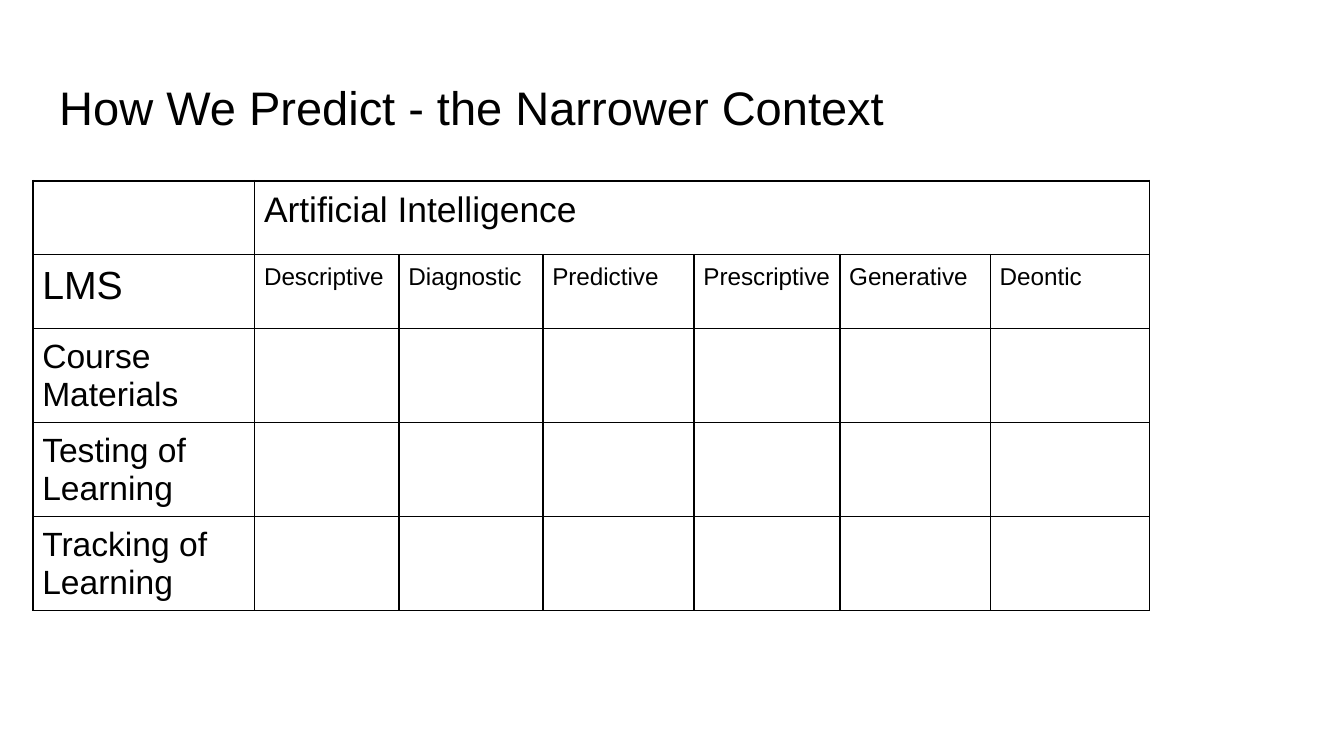
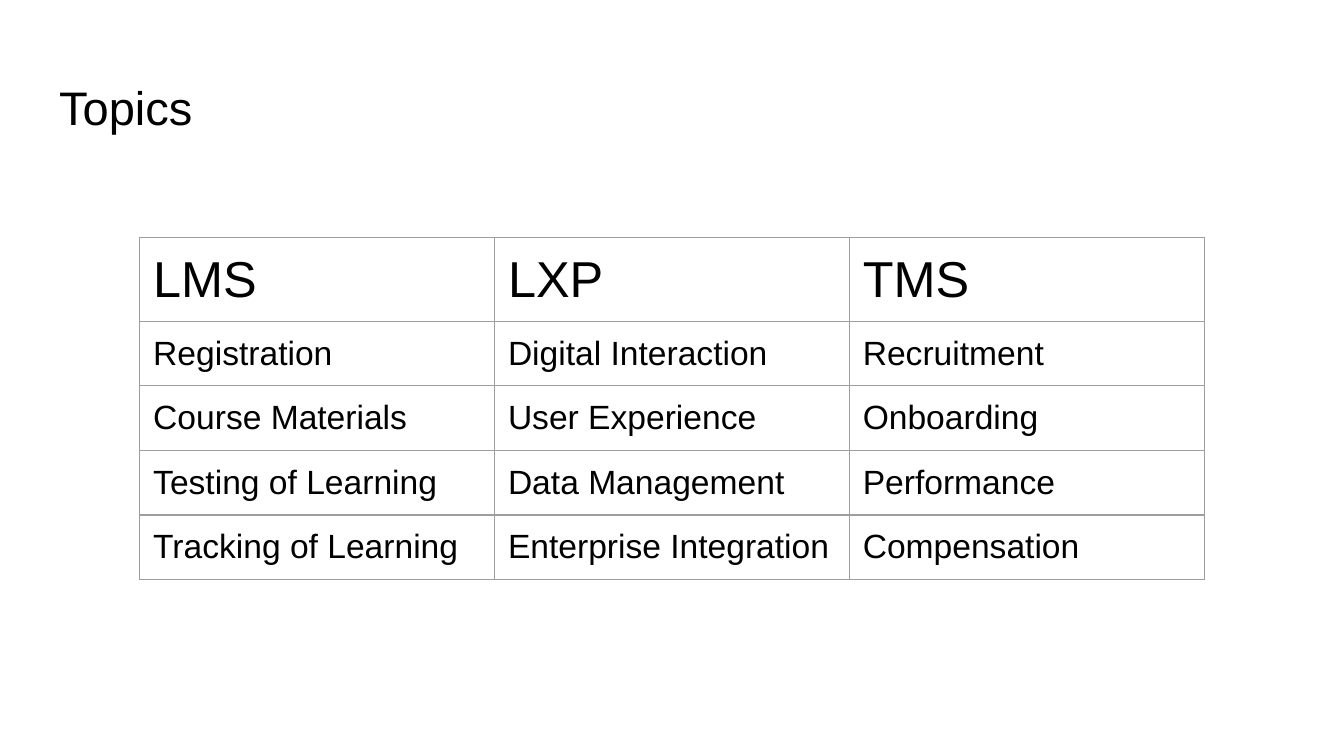
import pptx
import pptx.dml.color
import pptx.enum.text
import pptx.oxml.ns
import pptx.util
import lxml.etree

PX = 4572
FONT = "Arial"
BLACK = "000000"
GREY = "9E9E9E"
TITLE_BOX = (68, 97, 1864, 125)
TITLE_SIZE = 25.2


def px(length):
    return pptx.util.Emu(length * PX)


def color(value):
    return pptx.dml.color.RGBColor.from_string(value)


def style_text(frame, size, inset):
    frame.margin_left = frame.margin_right = px(inset)
    frame.margin_top = frame.margin_bottom = px(inset)
    for para in frame.paragraphs:
        para.alignment = pptx.enum.text.PP_ALIGN.LEFT
        for span in para.runs:
            span.font.size = pptx.util.Pt(size)
            span.font.name = FONT
            span.font.color.rgb = color(BLACK)


def border_cell(cell, line_color, width):
    properties = cell._tc.get_or_add_tcPr()
    qualify = pptx.oxml.ns.qn
    for side in ("a:lnL", "a:lnR", "a:lnT", "a:lnB"):
        line = lxml.etree.SubElement(
            properties, qualify(side), w=str(pptx.util.Pt(width)))
        fill = lxml.etree.SubElement(line, qualify("a:solidFill"))
        lxml.etree.SubElement(fill, qualify("a:srgbClr"), val=line_color)


def add_page(deck, title):
    page = deck.slides.add_slide(deck.slide_layouts[5])
    box = page.shapes.title
    box.left, box.top, box.width, box.height = map(px, TITLE_BOX)
    frame = box.text_frame
    frame.text = title
    frame.word_wrap = True
    frame.auto_size = pptx.enum.text.MSO_AUTO_SIZE.NONE
    frame.vertical_anchor = pptx.enum.text.MSO_ANCHOR.MIDDLE
    style_text(frame, TITLE_SIZE, 20)
    return page


def add_grid(page, left, top, columns, heights, rows, size_at, inset, line_color, line_width):
    frame = page.shapes.add_table(
        len(rows), len(columns), px(left), px(top), px(sum(columns)), px(sum(heights)))
    table = frame.table
    table.first_row = False
    table.horz_banding = False
    for column, width in zip(table.columns, columns):
        column.width = px(width)
    for row, height in zip(table.rows, heights):
        row.height = px(height)
    for row_index, texts in enumerate(rows):
        for column_index in range(len(columns)):
            cell = table.cell(row_index, column_index)
            border_cell(cell, line_color, line_width)
            cell.fill.background()
            if column_index < len(texts) and texts[column_index]:
                cell.text = texts[column_index]
                style_text(cell.text_frame, size_at(row_index, column_index), inset)
                cell.margin_left = cell.margin_right = px(inset)
                cell.margin_top = cell.margin_bottom = px(inset)
    return table


def context_size(row, column):
    if row == 0:
        return 19
    if row == 1:
        return 13 if column else 21
    return 18


def topic_size(row, column):
    return 18 if row else 27


def build_context_page(deck):
    page = add_page(deck, "How We Predict - the Narrower Context")
    rows = [
        ["", "Artificial Intelligence"],
        ["LMS", "Descriptive", "Diagnostic", "Predictive",
         "Prescriptive", "Generative", "Deontic"],
        ["Course Materials"],
        ["Testing of Learning"],
        ["Tracking of Learning"],
    ]
    columns = [330, 215, 214, 225, 217, 224, 237]
    table = add_grid(page, 49, 269, columns, [110] * len(rows), rows,
                     context_size, 14, BLACK, 1)
    table.cell(0, 1).merge(table.cell(0, len(columns) - 1))


def build_topics_page(deck):
    page = add_page(deck, "Topics")
    rows = [
        ["LMS", "LXP", "TMS"],
        ["Registration", "Digital Interaction", "Recruitment"],
        ["Course Materials", "User Experience", "Onboarding"],
        ["Testing of Learning", "Data Management", "Performance"],
        ["Tracking of Learning", "Enterprise Integration", "Compensation"],
    ]
    add_grid(page, 208, 354, [528] * 3, [84] * len(rows), rows,
             topic_size, 20, GREY, 0.75)


def main():
    deck = pptx.Presentation()
    deck.slide_width = px(2000)
    deck.slide_height = px(1125)
    build_context_page(deck)
    build_topics_page(deck)
    deck.save("out.pptx")


if __name__ == "__main__":
    main()
